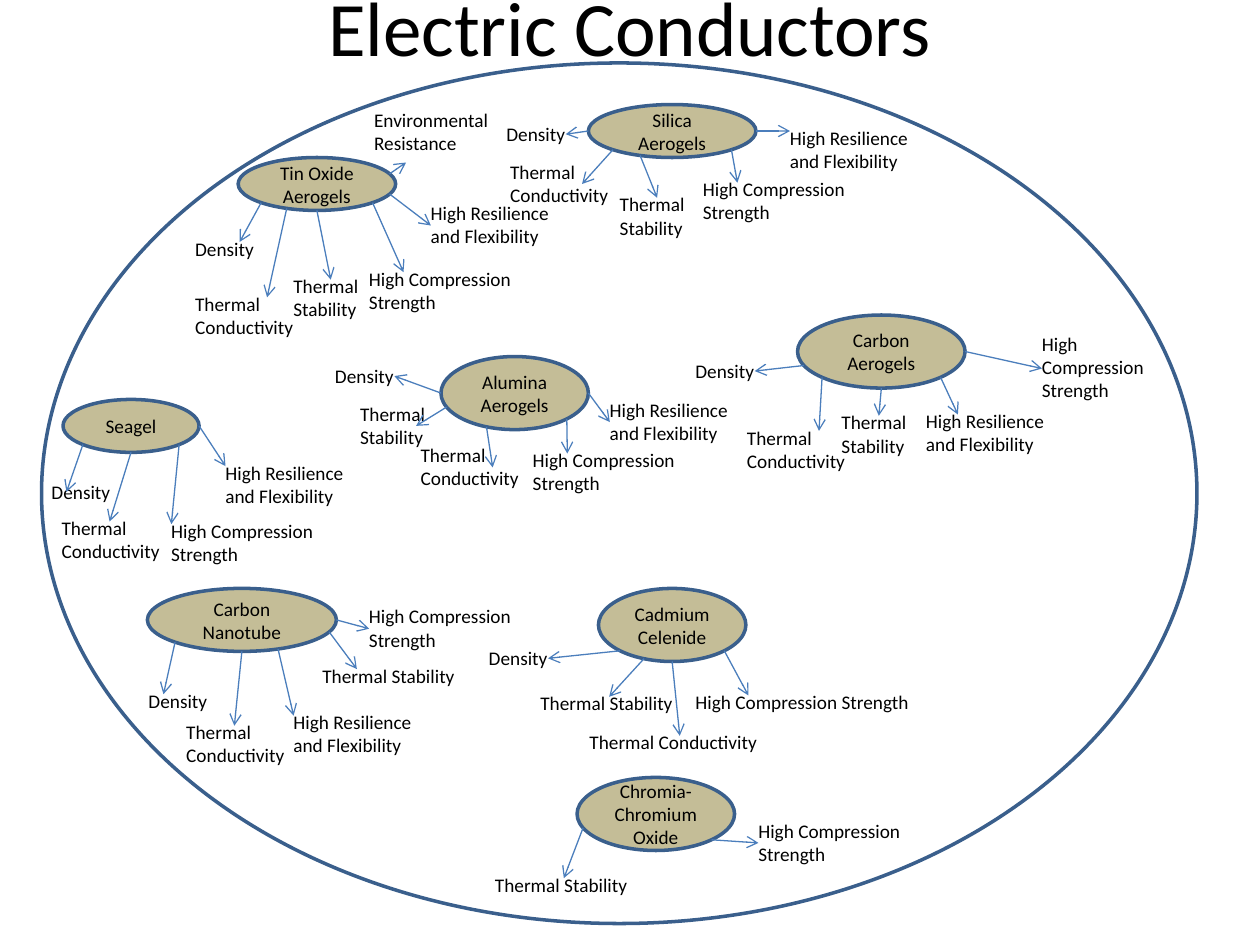
from math import cos, radians, sin

from lxml import etree
from pptx import Presentation
from pptx.dml.color import RGBColor
from pptx.enum.shapes import MSO_CONNECTOR, MSO_SHAPE
from pptx.enum.text import MSO_ANCHOR, MSO_AUTO_SIZE, PP_ALIGN
from pptx.oxml.ns import qn
from pptx.util import Inches, Pt

OVAL, STRAIGHT = MSO_SHAPE.OVAL, MSO_CONNECTOR.STRAIGHT
MIDDLE, CENTER, LEFT = MSO_ANCHOR.MIDDLE, PP_ALIGN.CENTER, PP_ALIGN.LEFT
GROW = MSO_AUTO_SIZE.SHAPE_TO_FIT_TEXT

WHITE = RGBColor(0xFF, 0xFF, 0xFF)
BLACK = RGBColor(0, 0, 0)
TAN = RGBColor(0xC4, 0xBD, 0x97)
OUTLINE = RGBColor(0x3A, 0x5F, 0x8C)
ARROW = RGBColor(0x4B, 0x7E, 0xBC)

# Property labels: text, number of lines, width
DENSITY = ("Density", 1, 0.71)
CONDUCTIVITY = ("Thermal Conductivity", 2, 1)
CONDUCTIVITY_SPLIT = ("Thermal\nConductivity", 2, 1)
CONDUCTIVITY_LINE = ("Thermal Conductivity", 1, 1.67)
STABILITY = ("Thermal Stability", 2, 0.83)
STABILITY_SPLIT = ("Thermal\nStability", 2, 0.83)
STABILITY_LINE = ("Thermal Stability", 1, 1.33)
STRENGTH = ("High Compression Strength", 2, 1.33)
STRENGTH_SPLIT = ("High Compression\nStrength", 2, 1.33)
STRENGTH_LINE = ("High Compression Strength", 1, 1.92)
STRENGTH_TALL = ("High Compression Strength", 3, 1.08)
FLEXIBILITY = ("High Resilience and Flexibility", 2, 1.25)
FLEXIBILITY_SPLIT = ("High Resilience\nand Flexibility", 2, 1.25)
RESISTANCE = ("Environmental Resistance", 2, 1.25)

# Where an arrow leaves an oval: sixteen compass points, clockwise from east
COMPASS = "E ESE SE SSE S SSW SW WSW W WNW NW NNW N NNE NE ENE".split()
# Where an arrow meets a label: across the text, then down the box
ACROSS = {name: step / 4 for step, name in enumerate(["start", "early", "mid", "late", "end"])}
TOP_GAP = 0.09

# Material, its oval (left, top, width, height), and its properties:
# label, left, top, compass point, place across, place down
MATERIALS = [
    ("Silica Aerogels", (4.67, 0.83, 1.33, 0.42), [
        (DENSITY, 3.92, 0.92, "W", "end", "middle"),
        (CONDUCTIVITY, 3.95, 1.22, "SW", "late", "middle"),
        (STABILITY, 4.82, 1.48, "SSW", "mid", "top"),
        (STRENGTH_SPLIT, 5.48, 1.36, "SE", "early", "top"),
        (FLEXIBILITY_SPLIT, 6.17, 0.95, "E", "start", "top"),
    ]),
    ("Cadmium Celenide", (4.75, 4.67, 1.17, 0.58), [
        (DENSITY, 3.78, 5.08, "SW", "end", "middle"),
        (CONDUCTIVITY_LINE, 4.58, 5.75, "S", "mid", "top"),
        (STABILITY_LINE, 4.19, 5.44, "SSW", "mid", "top"),
        (STRENGTH_LINE, 5.42, 5.43, "SE", "early", "top"),
    ]),
    ("Tin Oxide Aerogels", (1.89, 1.25, 1.25, 0.42), [
        (DENSITY, 1.45, 1.83, "SW", "late", "top"),
        (CONDUCTIVITY, 1.45, 2.27, "SSW", "late", "top"),
        (STABILITY_SPLIT, 2.23, 2.13, "S", "mid", "top"),
        (STRENGTH, 2.83, 2.07, "SE", "early", "top"),
        (FLEXIBILITY, 3.32, 1.55, "ESE", "start", "middle"),
        (RESISTANCE, 2.87, 0.81, "ENE", "early", "bottom"),
    ]),
    ("Carbon Aerogels", (6.33, 2.5, 1.33, 0.58), [
        (DENSITY, 5.42, 2.8, "WSW", "end", "middle"),
        (CONDUCTIVITY, 5.83, 3.33, "SW", "late", "top"),
        (STABILITY, 6.58, 3.21, "S", "mid", "top"),
        (FLEXIBILITY, 7.25, 3.2, "SE", "early", "top"),
        (STRENGTH_TALL, 8.17, 2.59, "E", "start", "middle"),
    ]),
    ("Alumina Aerogels", (3.5, 2.83, 1.17, 0.58), [
        (DENSITY, 2.56, 2.84, "W", "end", "middle"),
        (STABILITY, 2.76, 3.14, "WSW", "late", "middle"),
        (CONDUCTIVITY, 3.24, 3.47, "SSW", "late", "middle"),
        (STRENGTH, 4.13, 3.51, "SE", "early", "top"),
        (FLEXIBILITY, 4.74, 3.11, "E", "start", "middle"),
    ]),
    ("Chromia-Chromium Oxide", (4.58, 6.17, 1.25, 0.58), [
        (STABILITY_LINE, 3.83, 6.88, "WSW", "mid", "top"),
        (STRENGTH, 5.92, 6.45, "SE", "start", "middle"),
    ]),
    ("Seagel", (0.5, 3.17, 1.08, 0.42), [
        (DENSITY, 0.31, 3.76, "SW", "early", "middle"),
        (CONDUCTIVITY_SPLIT, 0.39, 4.05, "S", "mid", "top"),
        (STRENGTH_SPLIT, 1.26, 4.07, "SE", "start", "top"),
        (FLEXIBILITY, 1.69, 3.61, "E", "start", "top"),
    ]),
    ("Carbon Nanotube", (1.17, 4.67, 1.5, 0.5), [
        (DENSITY, 1.08, 5.42, "SW", "early", "top"),
        (CONDUCTIVITY_SPLIT, 1.38, 5.67, "S", "mid", "top"),
        (FLEXIBILITY, 2.23, 5.59, "SSE", "start", "top"),
        (STABILITY_LINE, 2.46, 5.22, "ESE", "early", "top"),
        (STRENGTH_SPLIT, 2.83, 4.75, "E", "start", "middle"),
    ]),
]

prs = Presentation()
prs.slide_width, prs.slide_height = Inches(10), Inches(7.5)
slide = prs.slides.add_slide(prs.slide_layouts[6])
shapes = slide.shapes


def write(shape, text, size, align):
    frame = shape.text_frame
    frame.word_wrap = True
    frame.text = text
    for paragraph in frame.paragraphs:
        paragraph.alignment = align
        for run in paragraph.runs:
            run.font.name = "Calibri"
            run.font.size = Pt(size)
            run.font.color.rgb = BLACK


def add_oval(box, fill):
    oval = shapes.add_shape(OVAL, *map(Inches, box))
    oval.shadow.inherit = False
    oval.fill.solid()
    oval.fill.fore_color.rgb = fill
    oval.line.color.rgb = OUTLINE
    oval.line.width = Pt(2)
    return oval


# Enclosing oval
add_oval((0.33, 0.5, 9.17, 6.83), WHITE)

for material, box, properties in MATERIALS:
    # Material
    material_oval = add_oval(box, TAN)
    material_oval.text_frame.vertical_anchor = MIDDLE
    write(material_oval, material, 11, CENTER)
    oval_left, oval_top, oval_width, oval_height = box

    for (text, lines, width), left, top, point, across, down in properties:
        # Property label
        height = 0.1 + 0.19 * lines
        label = shapes.add_textbox(Inches(left), Inches(top), Inches(width), Inches(height))
        write(label, text, 11, LEFT)
        label.text_frame.auto_size = GROW

        # Arrow from the rim of the oval to the text of the label
        angle = radians(COMPASS.index(point) * 360 / len(COMPASS))
        start_x = oval_left + oval_width * (1 + cos(angle)) / 2
        start_y = oval_top + oval_height * (1 + sin(angle)) / 2
        tip_x = left + 0.1 + ACROSS[across] * (width - 0.24)
        tip_y = top + {"top": TOP_GAP, "middle": height / 2, "bottom": height}[down]
        arrow = shapes.add_connector(STRAIGHT, *map(Inches, (start_x, start_y, tip_x, tip_y)))
        arrow.line.color.rgb = ARROW
        arrow.line.width = Pt(0.75)
        outline = arrow._element.spPr.find(qn("a:ln"))
        etree.SubElement(outline, qn("a:tailEnd"), type="arrow")
        etree.SubElement(arrow._element.spPr, qn("a:effectLst"))

# Title
title = shapes.add_textbox(Inches(0.5), Inches(-0.42), Inches(9), Inches(1.25))
title.text_frame.vertical_anchor = MIDDLE
write(title, "Electric Conductors", 44, CENTER)

prs.save("out.pptx")
